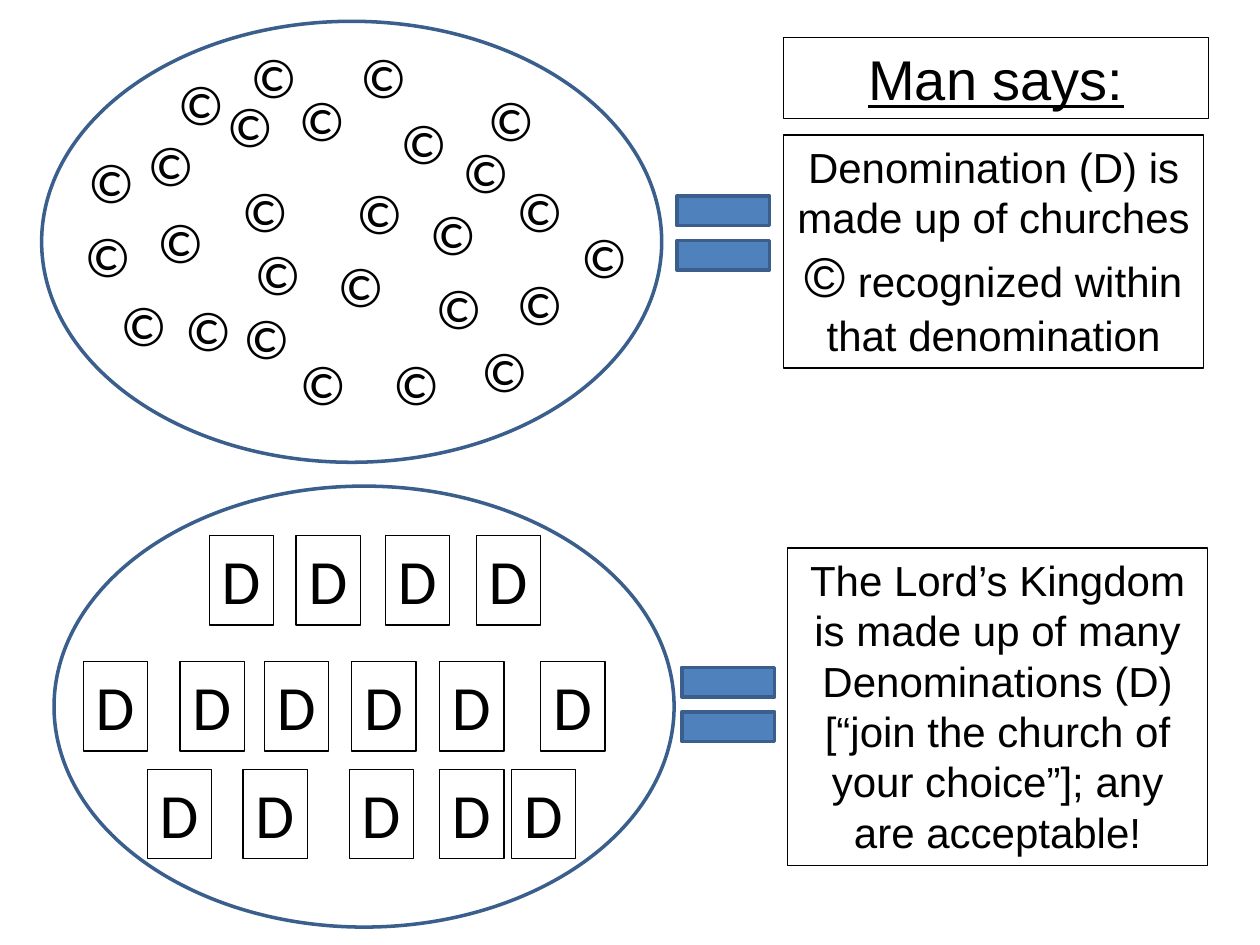
from pptx import Presentation
from pptx.dml.color import RGBColor
from pptx.enum.shapes import MSO_SHAPE as Kind
from pptx.enum.text import MSO_ANCHOR as Anchor, MSO_AUTO_SIZE as Fit, PP_ALIGN as Align
from pptx.util import Cm, Pt

BLUE, NAVY, BLACK = "4F81BD", "3A5F8C", "000000"

TITLE = ("Man says:", (15.8, 0.76, 8.56, 1.63))
NOTES = [
    ([("Denomination (D) is made up of churches ", 24), ("©", 32),
      (" recognized within that denomination", 24)], (15.8, 2.72, 8.46, 4.7)),
    ([("The Lord’s Kingdom is made up of many Denominations (D) "
       "[“join the church of your choice”]; any are acceptable!", 24)],
     (15.88, 11.05, 8.46, 6.4)),
]
OVALS = [(0.84, 0.43, 12.5, 8.89), (1.09, 9.8, 12.5, 8.89)]
EQUALS = [(13.31, 3.43, 2.54, 2.54), (13.41, 12.93, 2.54, 2.54)]
CHURCH = [
    (4.8, 0.74), (7.01, 0.74), (3.33, 1.27), (5.77, 1.6), (9.58, 1.6),
    (4.32, 1.73), (7.82, 2.06), (2.72, 2.51), (9.07, 2.64), (1.52, 2.84),
    (4.62, 3.43), (10.16, 3.43), (6.93, 3.48), (8.41, 3.89), (2.92, 4.06),
    (1.45, 4.34), (11.46, 4.37), (4.88, 4.7), (6.55, 4.95), (10.16, 5.31),
    (8.53, 5.38), (2.18, 5.74), (3.48, 5.84), (4.65, 5.99), (9.45, 6.65),
    (5.79, 6.93), (7.67, 6.93),
]
GROUPS = {
    10.8: [4.22, 5.97, 7.77, 9.6],
    13.34: [1.68, 3.63, 5.33, 7.09, 8.86, 10.9],
    15.51: [2.97, 4.9, 7.04, 8.86, 10.31],
}
MARK = {"font": "Calibri", "align": Align.LEFT, "wrap": False}
NOTE = {"font": "Arial", "align": Align.CENTER, "wrap": True}
HEAD = {**NOTE, "under": True, "fit": Fit.NONE}


def tint(color, code):
    color.rgb = RGBColor.from_string(code)


def edge(shape, code, width):
    tint(shape.line.color, code)
    shape.line.width = Pt(width)


def write(shape, runs, font, align, wrap, under=None, fit=Fit.SHAPE_TO_FIT_TEXT):
    frame = shape.text_frame
    look = {"word_wrap": wrap, "auto_size": fit, "vertical_anchor": Anchor.TOP}
    for name, value in look.items():
        setattr(frame, name, value)
    para = frame.paragraphs[0]
    para.alignment = align
    for text, size in runs:
        run = para.add_run()
        run.text = text
        style = {"name": font, "size": Pt(size), "underline": under}
        for name, value in style.items():
            setattr(run.font, name, value)
        tint(run.font.color, BLACK)


def label(slide, area, runs, style, framed=True):
    box = slide.shapes.add_textbox(*map(Cm, area))
    write(box, runs, **style)
    if framed:
        edge(box, BLACK, 0.75)


def draw(slide, kind, area, fill=None):
    shape = slide.shapes.add_shape(kind, *map(Cm, area))
    shape.shadow.inherit = False
    if fill:
        shape.fill.solid()
        tint(shape.fill.fore_color, fill)
    else:
        shape.fill.background()
    edge(shape, NAVY, 2)


def main():
    deck = Presentation()
    deck.slide_width, deck.slide_height = Cm(25.4), Cm(19.05)
    slide = deck.slides.add_slide(deck.slide_layouts[5])

    text, area = TITLE
    title = slide.shapes.title
    for name, value in zip(("left", "top", "width", "height"), area):
        setattr(title, name, Cm(value))
    write(title, [(text, 32)], **HEAD)
    edge(title, BLACK, 0.75)

    for area in OVALS:
        draw(slide, Kind.OVAL, area)
    for area in EQUALS:
        draw(slide, Kind.MATH_EQUAL, area, BLUE)
    for runs, area in NOTES:
        label(slide, area, runs, NOTE)
    for left, top in CHURCH:
        label(slide, (left, top, 1.47, 1.63), [("©", 32)], MARK, framed=False)
    for top, row in GROUPS.items():
        for left in row:
            label(slide, (left, top, 1.3, 1.8), [("D", 36)], MARK)

    deck.save("out.pptx")


if __name__ == "__main__":
    main()
